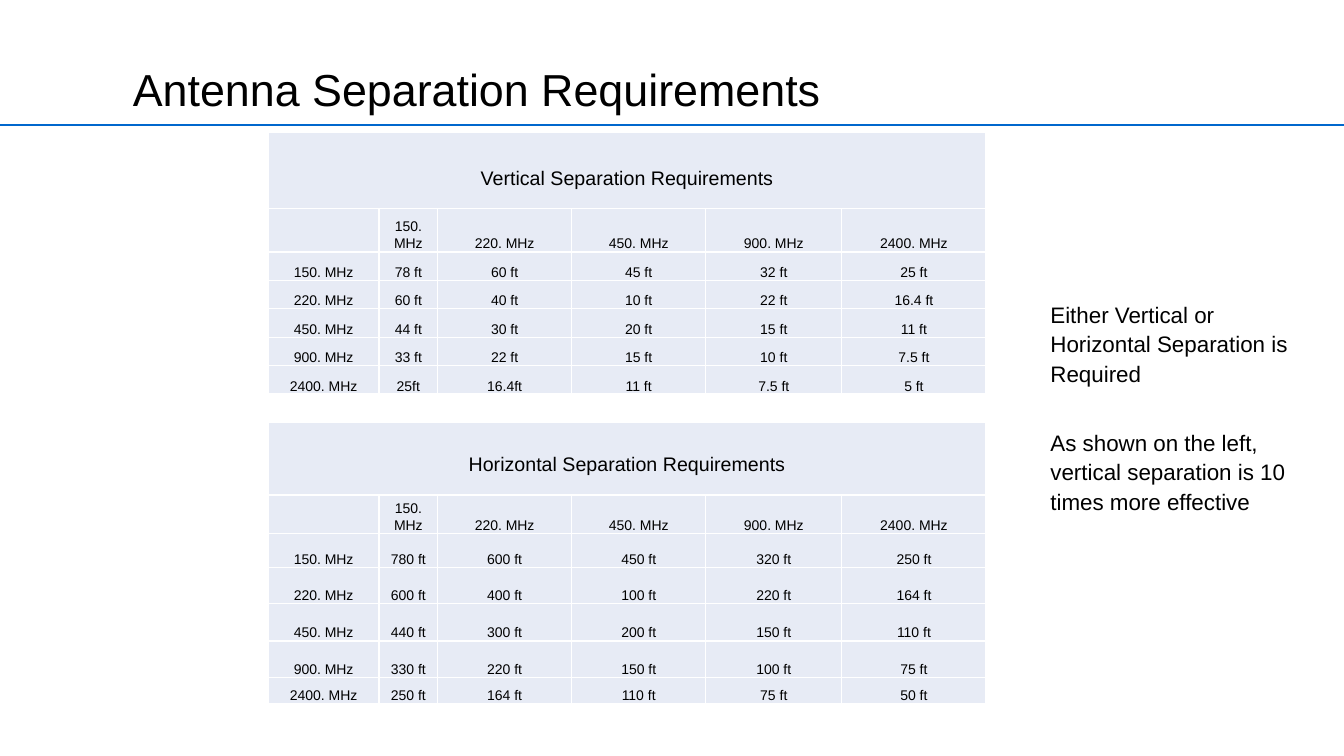
"""Build the antenna separation slide."""
import pptx
import pptx.dml.color
import pptx.enum.shapes
import pptx.enum.text
import pptx.oxml
import pptx.oxml.ns
import pptx.util
from pptx.util import Inches

COLORS = {"rule": "0067CD", "cell": "E7EBF5", "edge": "FFFFFF", "text": "000000"}
BANDS = ["150. MHz", "220. MHz", "450. MHz", "900. MHz", "2400. MHz"]
WIDTHS = [1.1, 0.58, 1.33, 1.33, 1.35, 1.43]
UPRIGHT = [
    ["78 ft", "60 ft", "45 ft", "32 ft", "25 ft"],
    ["60 ft", "40 ft", "10 ft", "22 ft", "16.4 ft"],
    ["44 ft", "30 ft", "20 ft", "15 ft", "11 ft"],
    ["33 ft", "22 ft", "15 ft", "10 ft", "7.5 ft"],
    ["25ft", "16.4ft", "11 ft", "7.5 ft", "5 ft"],
]
LEVEL = [
    ["780 ft", "600 ft", "450 ft", "320 ft", "250 ft"],
    ["600 ft", "400 ft", "100 ft", "220 ft", "164 ft"],
    ["440 ft", "300 ft", "200 ft", "150 ft", "110 ft"],
    ["330 ft", "220 ft", "150 ft", "100 ft", "75 ft"],
    ["250 ft", "164 ft", "110 ft", "75 ft", "50 ft"],
]
ALIGN = pptx.enum.text.PP_ALIGN
ANCHOR = pptx.enum.text.MSO_ANCHOR


def paint(name):
    """Return the named color."""
    return pptx.dml.color.RGBColor.from_string(COLORS[name])


def style(para, size, lines, align=ALIGN.LEFT):
    """Format a paragraph and its runs."""
    para.alignment = align
    para.line_spacing = lines
    para.space_before = pptx.util.Pt(0)
    for run in para.runs:
        run.font.name = "Arial"
        run.font.size = pptx.util.Pt(size)
        run.font.color.rgb = paint("text")


def add_text(slide, text, box, size, lines, anchor=ANCHOR.TOP, gap=0):
    """Add a wrapped text box with a gap between paragraphs."""
    frame = slide.shapes.add_textbox(*map(Inches, box)).text_frame
    frame.word_wrap = True
    frame.vertical_anchor = anchor
    frame.text = text
    for para in frame.paragraphs:
        style(para, size, lines)
    for para in frame.paragraphs[1:]:
        para.space_before = pptx.util.Pt(gap)


def add_rule(slide, top):
    """Draw a line across the slide."""
    kind = pptx.enum.shapes.MSO_CONNECTOR.STRAIGHT
    rule = slide.shapes.add_connector(
        kind, Inches(0), Inches(top), Inches(13.33), Inches(top))
    rule.line.color.rgb = paint("rule")
    rule.line.width = pptx.util.Pt(1.5)
    pptx.oxml.ns.qn("a:effectLst")
    rule.line._get_or_add_ln().addnext(pptx.oxml.parse_xml(
        f'<a:effectLst {pptx.oxml.ns.nsdecls("a")}/>'))


def fill_cell(cell, text, size, bottom=0):
    """Set the edges, fill and text of a cell."""
    for side in "LRTB":
        cell._tc.get_or_add_tcPr().append(pptx.oxml.parse_xml(
            f'<a:ln{side} {pptx.oxml.ns.nsdecls("a")} w="12700"><a:solidFill>'
            f'<a:srgbClr val="{COLORS["edge"]}"/></a:solidFill></a:ln{side}>'))
    cell.fill.solid()
    cell.fill.fore_color.rgb = paint("cell")
    cell.vertical_anchor = ANCHOR.BOTTOM
    cell.margin_left = cell.margin_right = Inches(0.07)
    cell.margin_top = Inches(0)
    cell.margin_bottom = Inches(bottom)
    cell.text_frame.text = text
    style(cell.text_frame.paragraphs[0], size, 1.1, ALIGN.CENTER)


def add_grid(slide, title, top, heights, data):
    """Add a table of distances between bands."""
    rows = [[title] + [""] * 5, [""] + BANDS]
    rows += [[band] + line for band, line in zip(BANDS, data)]
    table = slide.shapes.add_table(
        len(rows), len(WIDTHS), Inches(2.66), Inches(top),
        Inches(sum(WIDTHS)), Inches(sum(heights))).table
    table.first_row = table.horz_banding = False
    for column, width in zip(table.columns, WIDTHS):
        column.width = Inches(width)
    for row, height, line in zip(table.rows, heights, rows):
        row.height = Inches(height)
        for cell, text in zip(row.cells, line):
            head = text == title
            fill_cell(cell, text, 14 if head else 10, 0.19 if head else 0)
    table.cell(0, 0).merge(table.cell(0, 5))


def main():
    """Build and save the slide."""
    deck = pptx.Presentation()
    deck.slide_width, deck.slide_height = Inches(13.33), Inches(7.5)
    slide = deck.slides.add_slide(deck.slide_layouts[6])
    add_rule(slide, 1.24)
    add_text(slide, "Antenna Separation Requirements",
             (1.22, 0, 11.56, 1.2), 32, 0.9, ANCHOR.BOTTOM)
    add_grid(slide, "Vertical Separation Requirements", 1.31,
             [0.76, 0.43, 0.28, 0.28, 0.29, 0.28, 0.28], UPRIGHT)
    add_grid(slide, "Horizontal Separation Requirements", 4.19,
             [0.72, 0.38, 0.34, 0.36, 0.37, 0.36, 0.26], LEVEL)
    add_text(slide, "Either Vertical or Horizontal Separation is Required\n"
             "As shown on the left, vertical separation is 10 times more effective",
             (10.32, 2.91, 2.76, 2.26), 16, 1.1, gap=28)
    deck.save("out.pptx")


if __name__ == "__main__":
    main()
